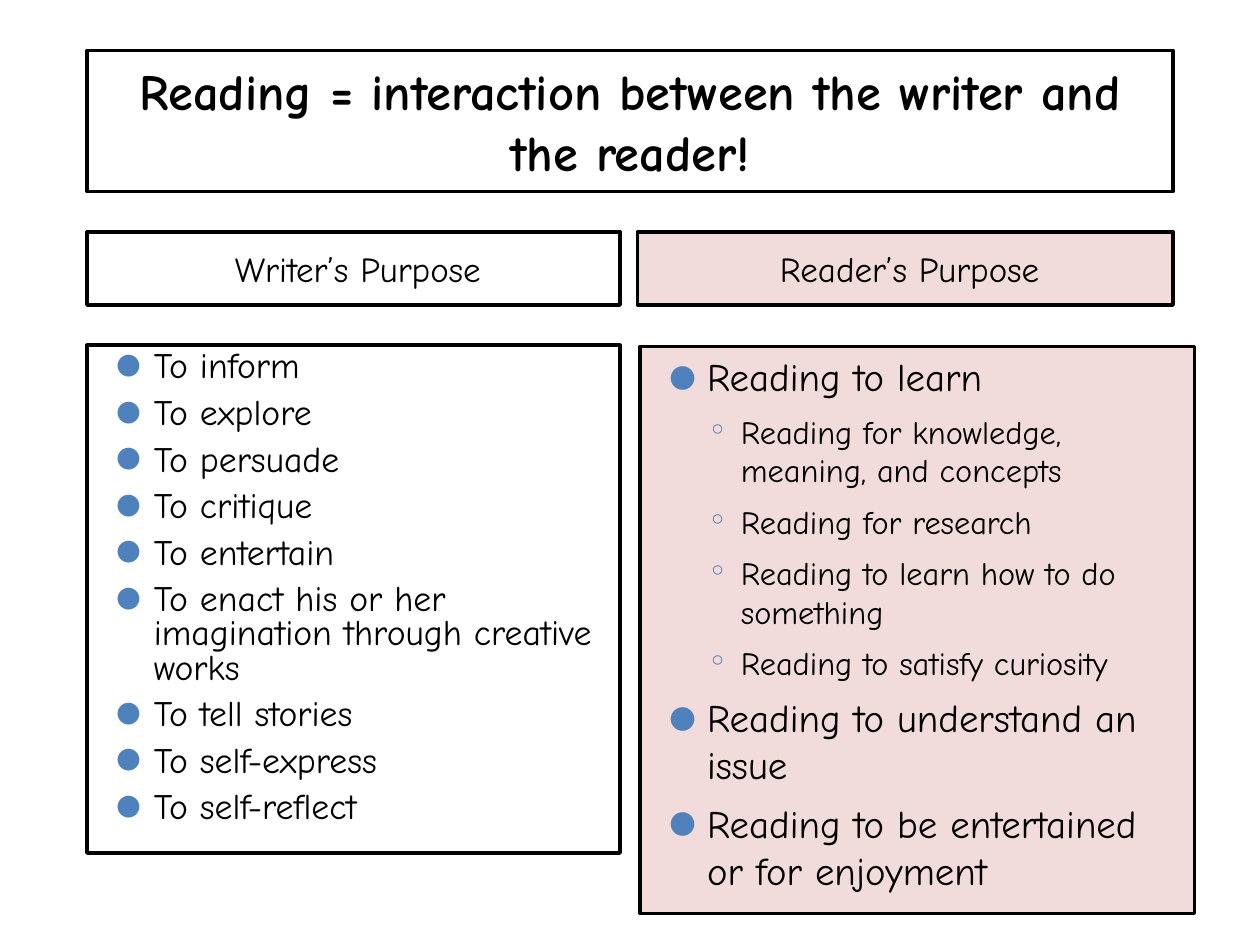
from lxml.etree import SubElement
from pptx import Presentation
from pptx.dml.color import RGBColor
from pptx.enum.text import MSO_ANCHOR, MSO_AUTO_SIZE, PP_ALIGN
from pptx.oxml.ns import qn
from pptx.util import Pt

FONT = "Comic Neue"
HEX = {"ink": "000000", "white": "FFFFFF", "pink": "F2DCDB", "dot": "4F81BD"}

TITLE = "Reading = interaction between the writer and the reader!"
HEADS = ["Writer’s Purpose", "Reader’s Purpose"]
# Each list item is (level, text)
WRITER = [(0, text) for text in (
    "To inform",
    "To explore",
    "To persuade",
    "To critique",
    "To entertain",
    "To enact his or her imagination through creative works",
    "To tell stories",
    "To self-express",
    "To self-reflect",
)]
READER = [
    (0, "Reading to learn"),
    (1, "Reading for knowledge, meaning, and concepts"),
    (1, "Reading for research"),
    (1, "Reading to learn how to do something"),
    (1, "Reading to satisfy curiosity"),
    (0, "Reading to understand an issue"),
    (0, "Reading to be entertained or for enjoyment"),
]

# Per level: left margin, hanging indent, bullet, bullet size in percent
LEVELS = [(31, -21.6, "●", 80), (50.4, -18.7, "◦", 100)]

# Left, top, width, height
LEFT, HEAD_TOP, HEAD_H = 49.7, 132.5, 41.8
TITLE_BOX = (LEFT, 28.8, 620.6, 80.6)
HEAD_BOXES = [(LEFT, HEAD_TOP, 304.6, HEAD_H), (364.3, HEAD_TOP, 306, HEAD_H)]
LIST_BOXES = [(LEFT, 197.3, 304.6, 290.2), (365.8, 198, 316.8, 324)]


def color(name):
    return RGBColor.from_string(HEX[name])


def frame(shape, box, fill):
    """Place and outline a placeholder, and return its text frame."""
    shape.left, shape.top, shape.width, shape.height = map(Pt, box)
    shape.shadow.inherit = False
    shape.fill.solid()
    shape.fill.fore_color.rgb = color(fill)
    shape.line.color.rgb = color("ink")
    shape.line.width = Pt(2)
    text = shape.text_frame
    text.word_wrap = True
    text.auto_size = MSO_AUTO_SIZE.NONE
    return text


def style(para, size, bold=False):
    for run in para.runs:
        font = run.font
        font.name, font.size, font.bold = FONT, Pt(size), bold
        font.color.rgb = color("ink")


def indent(para, margin, first):
    props = para._p.get_or_add_pPr()
    props.set("marL", str(int(Pt(margin))))
    props.set("indent", str(int(Pt(first))))
    return props


def bullet(para, level):
    margin, first, char, size = LEVELS[level]
    props = indent(para, margin, first)
    tint = SubElement(props, qn("a:buClr"))
    SubElement(tint, qn("a:srgbClr"), val=HEX["dot"])
    SubElement(props, qn("a:buSzPct"), val=str(size * 1000))
    SubElement(props, qn("a:buFont"), typeface=FONT)
    SubElement(props, qn("a:buChar"), char=char)


def banner(shape, box, fill, words, size, bold=False):
    """Fill a box with one centred line of text."""
    text = frame(shape, box, fill)
    text.text = words
    text.vertical_anchor = MSO_ANCHOR.MIDDLE
    para = text.paragraphs[0]
    para.alignment = PP_ALIGN.CENTER
    style(para, size, bold)
    return para


def listing(shape, box, fill, items, sizes, pitch):
    text = frame(shape, box, fill)
    text.vertical_anchor = MSO_ANCHOR.TOP
    text.text = "\n".join(words for _, words in items)
    for para, (level, _) in zip(text.paragraphs, items):
        para.level = level
        para.line_spacing = pitch
        para.space_before = Pt(7)
        bullet(para, level)
        style(para, sizes[level])


def main():
    deck = Presentation()
    deck.slide_width, deck.slide_height = Pt(720), Pt(540)
    slide = deck.slides.add_slide(deck.slide_layouts[4])
    slots = slide.placeholders

    banner(slots[0], TITLE_BOX, "white", TITLE, 28.8, True)
    fills = ["white", "pink"]
    for slot, box, fill, words in zip((1, 3), HEAD_BOXES, fills, HEADS):
        para = banner(slots[slot], box, fill, words, 20)
        para.space_before = Pt(1)
        indent(para, 5, 0)
    listing(slots[2], LIST_BOXES[0], fills[0], WRITER, [20.4], 0.8)
    listing(slots[4], LIST_BOXES[1], fills[1], READER, [22.2, 18.5], 1.0)

    deck.save("out.pptx")


if __name__ == "__main__":
    main()
